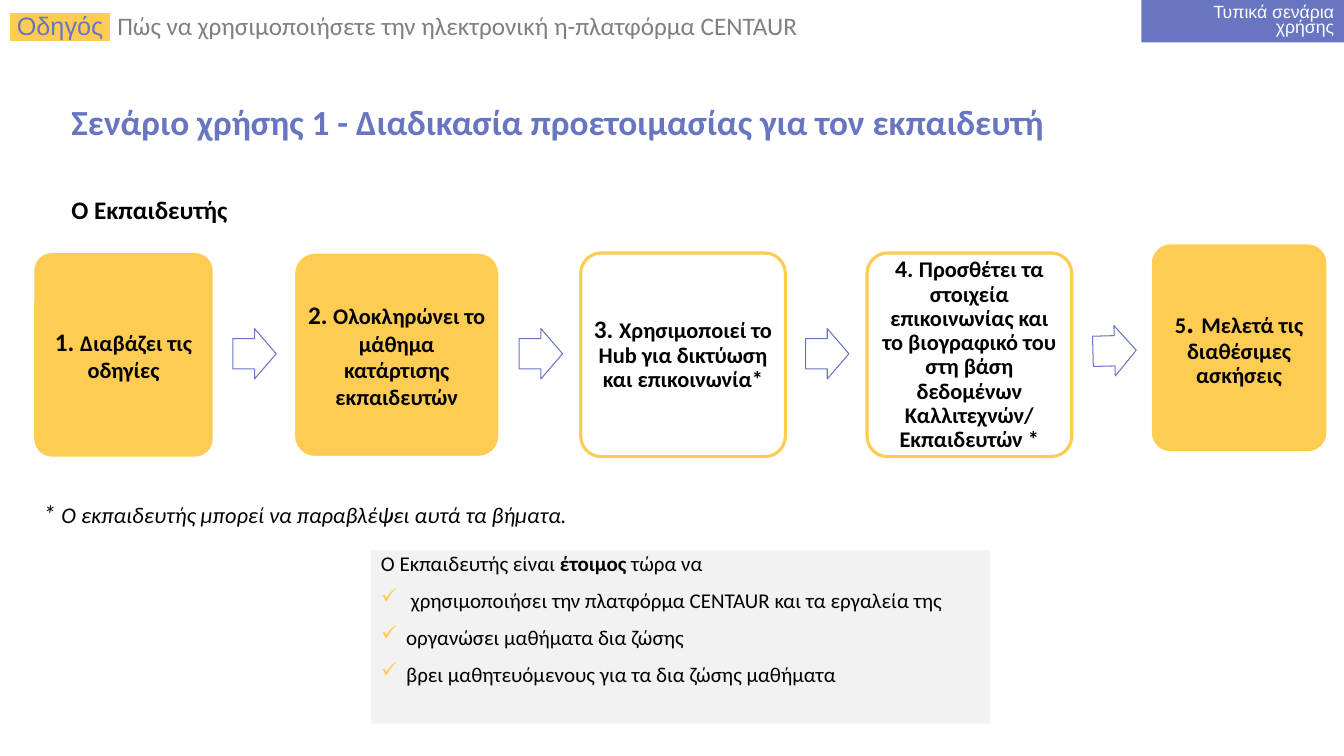
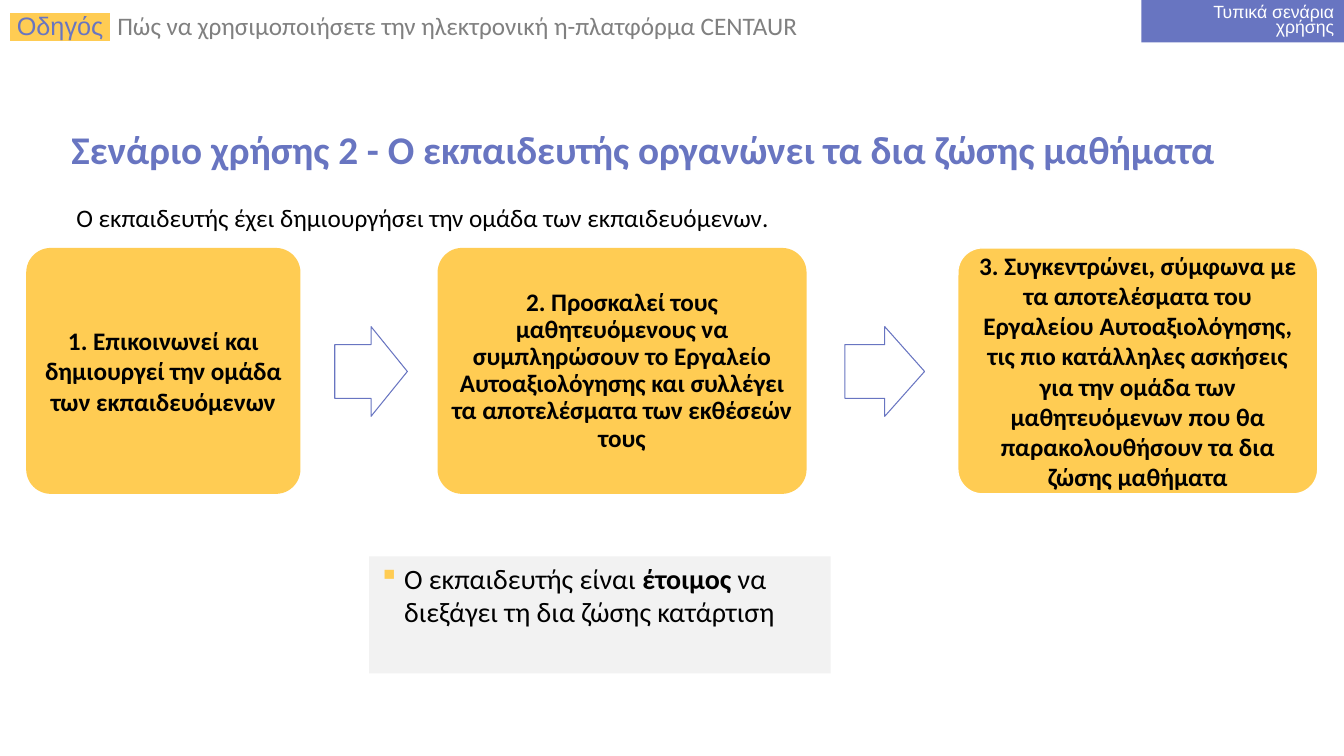
from lxml.etree import SubElement
from pptx import Presentation
from pptx.dml.color import RGBColor
from pptx.enum.shapes import MSO_SHAPE
from pptx.enum.text import MSO_ANCHOR, PP_ALIGN
from pptx.oxml import parse_xml
from pptx.oxml.ns import nsdecls, qn
from pptx.util import Inches, Pt

YELLOW = RGBColor(0xFF, 0xCC, 0x53)
BLUE = RGBColor(0x68, 0x75, 0xC1)
GRAY = RGBColor(0x80, 0x80, 0x80)
PALE = RGBColor(0xF2, 0xF2, 0xF2)
WHITE = RGBColor(0xFF, 0xFF, 0xFF)
BLACK = RGBColor(0, 0, 0)
BODY_FONT = "Calibri"
HEADER_FONT = "Arial"


def add_run(paragraph, text, size, color=BLACK, bold=False, italic=False,
            font=BODY_FONT, highlight=None):
    run = paragraph.add_run()
    run.text = text
    run.font.size = Pt(size)
    run.font.bold = bold
    run.font.italic = italic
    run.font.color.rgb = color
    run.font.name = font
    if highlight is not None:
        mark = parse_xml(f'<a:highlight {nsdecls("a")}><a:srgbClr val="{highlight}"/></a:highlight>')
        run.font._element.find(qn("a:solidFill")).addnext(mark)


def add_bullet(paragraph, symbol):
    properties = paragraph._p.get_or_add_pPr()
    properties.set("marL", str(Inches(0.25)))
    properties.set("indent", str(-Inches(0.25)))
    color = SubElement(properties, qn("a:buClr"))
    SubElement(color, qn("a:srgbClr"), val=str(YELLOW))
    SubElement(properties, qn("a:buChar"), char=symbol)


def add_text(slide, left, top, width, height, spacing=1.0, anchor=MSO_ANCHOR.TOP):
    box = slide.shapes.add_textbox(Inches(left), Inches(top), Inches(width), Inches(height))
    frame = box.text_frame
    frame.word_wrap = True
    frame.vertical_anchor = anchor
    frame.paragraphs[0].line_spacing = spacing
    return frame.paragraphs[0]


def add_block(slide, kind, left, top, width, height, fill=None, line=None, weight=1):
    block = slide.shapes.add_shape(kind, Inches(left), Inches(top), Inches(width), Inches(height))
    block.shadow.inherit = False
    if fill is None:
        block.fill.background()
    else:
        block.fill.solid()
        block.fill.fore_color.rgb = fill
    if line is None:
        block.line.fill.background()
    else:
        block.line.color.rgb = line
        block.line.width = Pt(weight)
    block.text_frame.word_wrap = True
    return block


def add_step(slide, left, top, width, height, pieces, spacing=1.0,
             fill=YELLOW, line=None, weight=1):
    step = add_block(slide, MSO_SHAPE.ROUNDED_RECTANGLE, left, top, width, height,
                     fill, line, weight)
    step.adjustments[0] = 0.1
    frame = step.text_frame
    frame.margin_left = frame.margin_right = Inches(0.07)
    frame.margin_top = frame.margin_bottom = Inches(0.07)
    frame.vertical_anchor = MSO_ANCHOR.MIDDLE
    label = frame.paragraphs[0]
    label.alignment = PP_ALIGN.CENTER
    label.line_spacing = spacing
    for text, size in pieces:
        add_run(label, text, size, bold=True)


def add_arrow(slide, left, top, width, height, rotation=0):
    arrow = add_block(slide, MSO_SHAPE.RIGHT_ARROW, left, top, width, height,
                      line=BLUE, weight=0.75)
    arrow.adjustments[0] = 0.6
    arrow.adjustments[1] = 0.5
    arrow.rotation = rotation


def add_outcome(slide, left, top, width, height, items, size, spacing=1.0):
    panel = add_block(slide, MSO_SHAPE.RECTANGLE, left, top, width, height, PALE)
    frame = panel.text_frame
    frame.vertical_anchor = MSO_ANCHOR.TOP
    for index, (symbol, pieces) in enumerate(items):
        item = frame.add_paragraph() if index else frame.paragraphs[0]
        item.alignment = PP_ALIGN.LEFT
        item.line_spacing = spacing
        item.space_after = Pt(6)
        if index:
            item.space_before = Pt(6)
        if symbol:
            add_bullet(item, symbol)
        for text, bold in pieces:
            add_run(item, text, size, bold=bold)


def add_framed_slide(deck, title, title_top, title_size):
    slide = deck.slides.add_slide(deck.slide_layouts[6])
    header = add_text(slide, 0, 0.11, 9.52, 0.35, 0.8)
    for text, color, highlight, font in (
            (" ", WHITE, YELLOW, HEADER_FONT),
            ("Οδηγός", BLUE, YELLOW, HEADER_FONT),
            (" ", GRAY, YELLOW, HEADER_FONT),
            (" ", GRAY, None, HEADER_FONT),
            ("Πώς να χρησιμοποιήσετε την ηλεκτρονική η-πλατφόρμα CENTAUR", GRAY, None, BODY_FONT)):
        add_run(header, text, 18, color, font=font, highlight=highlight)

    section = add_block(slide, MSO_SHAPE.RECTANGLE, 11.32, 0, 2.01, 0.42, BLUE)
    section.text_frame.margin_left = Inches(0.2)
    section.text_frame.vertical_anchor = MSO_ANCHOR.MIDDLE
    section_name = section.text_frame.paragraphs[0]
    section_name.alignment = PP_ALIGN.RIGHT
    section_name.line_spacing = 0.7
    add_run(section_name, "Τυπικά σενάρια χρήσης", 12.6, WHITE, font=HEADER_FONT)

    heading = add_text(slide, 0.61, title_top, 12.1, 0.66, 0.9, MSO_ANCHOR.MIDDLE)
    add_run(heading, title, title_size, BLUE, bold=True)
    return slide


def build_preparation(deck):
    slide = add_framed_slide(
        deck, "Σενάριο χρήσης 1 - Διαδικασία προετοιμασίας για τον εκπαιδευτή", 0.9, 25.2)
    add_run(add_text(slide, 0.61, 1.88, 6.69, 0.4), "Ο Εκπαιδευτής", 18, bold=True)

    filled = {"line": WHITE}
    outlined = {"fill": None, "line": YELLOW, "weight": 2.25, "spacing": 0.9}
    final = {"line": YELLOW, "weight": 2.25, "spacing": 0.9}
    steps = (
        (0.34, 2.51, 1.77, [("1. ", 18), ("Διαβάζει τις οδηγίες", 16)], {}),
        (2.92, 2.51, 2.03, [("2. ", 18), ("Ολοκληρώνει το μάθημα κατάρτισης εκπαιδευτών", 16)],
         filled),
        (5.76, 2.51, 2.03,
         [("3. ", 18), ("Χρησιμοποιεί το Hub για δικτύωση και επικοινωνία*", 16)], outlined),
        (8.6, 2.51, 2.03,
         [("4. ", 17), ("Προσθέτει τα στοιχεία επικοινωνίας και το βιογραφικό του "
                        "στη βάση δεδομένων Καλλιτεχνών/ Εκπαιδευτών *", 16)], outlined),
        (11.44, 2.44, 1.7,
         [("5", 16), (". ", 22), ("Μελετά τις διαθέσιμες ασκήσεις", 16)], final),
    )
    for left, top, width, pieces, style in steps:
        add_step(slide, left, top, width, 2.02, pieces, **style)
    for left, _, width, _, _ in steps[:3]:
        add_arrow(slide, left + width + 0.2, 3.26, 0.43, 0.5)
    add_arrow(slide, 10.84, 3.23, 0.43, 0.5, 358.5)

    footnote = add_text(slide, 0.33, 4.89, 6.69, 0.4)
    add_run(footnote, "* ", 18, italic=True)
    add_run(footnote, "Ο εκπαιδευτής μπορεί να παραβλέψει αυτά τα βήματα.", 16, italic=True)

    add_outcome(slide, 3.68, 5.46, 6.14, 1.72, (
        (None, [("Ο Εκπαιδευτής είναι ", False), ("έτοιμος ", True), ("τώρα να", False)]),
        ("✓", [(" χρησιμοποιήσει την πλατφόρμα CENTAUR και τα εργαλεία της", False)]),
        ("✓", [("οργανώσει μαθήματα δια ζώσης", False)]),
        ("✓", [("βρει μαθητευόμενους για τα δια ζώσης μαθήματα", False)]),
    ), 15, 0.8)


def build_live_lessons(deck):
    slide = add_framed_slide(
        deck, "Σενάριο χρήσης 2 - Ο εκπαιδευτής οργανώνει τα δια ζώσης μαθήματα", 1.18, 28)
    add_run(add_text(slide, 0.66, 1.96, 10.4, 0.4),
            "Ο εκπαιδευτής έχει δημιουργήσει την ομάδα των εκπαιδευόμενων.", 18)

    steps = (
        (0.26, 2.72, "1. Επικοινωνεί και δημιουργεί την ομάδα των εκπαιδευόμενων", {}),
        (4.34, 3.66, "2. Προσκαλεί τους μαθητευόμενους να συμπληρώσουν το Εργαλείο "
                     "Αυτοαξιολόγησης και συλλέγει τα αποτελέσματα των εκθέσεών τους",
         {"spacing": 0.9}),
        (9.5, 3.57, "3. Συγκεντρώνει, σύμφωνα με τα αποτελέσματα του Εργαλείου "
                    "Αυτοαξιολόγησης, τις πιο κατάλληλες ασκήσεις για την ομάδα των "
                    "μαθητευόμενων που θα παρακολουθήσουν τα δια ζώσης μαθήματα",
         {"line": WHITE}),
    )
    for left, width, text, style in steps:
        add_step(slide, left, 2.46, width, 2.44, [(text, 18)], **style)
    for left, width in ((3.32, 0.72), (8.38, 0.79)):
        add_arrow(slide, left, 3.24, width, 0.89)

    add_outcome(slide, 3.66, 5.52, 4.58, 1.16, (
        ("▪", [("Ο εκπαιδευτής είναι ", False), ("έτοιμος", True),
               (" να διεξάγει τη δια ζώσης κατάρτιση", False)]),
    ), 20)


def main():
    deck = Presentation()
    deck.slide_width = Inches(13.33)
    deck.slide_height = Inches(7.5)
    build_preparation(deck)
    build_live_lessons(deck)
    deck.save("out.pptx")


if __name__ == "__main__":
    main()
